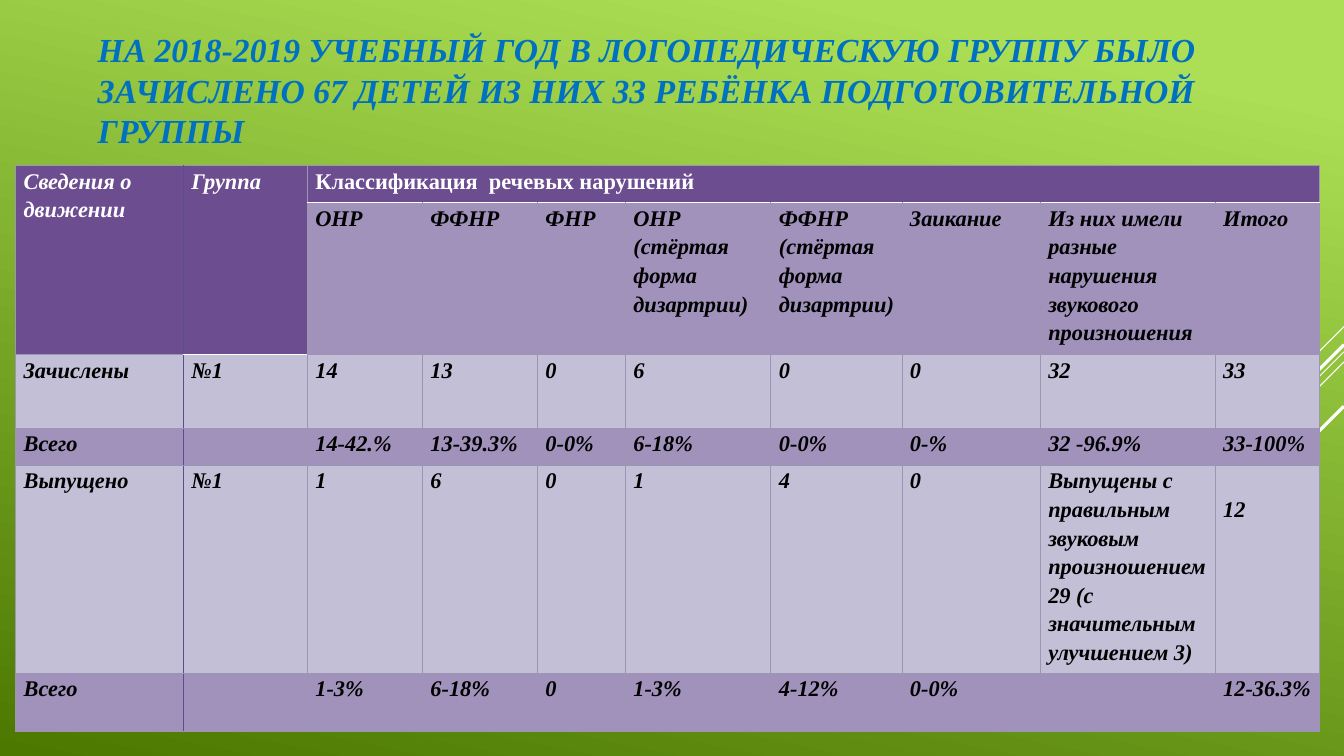
"""Build the slide on children enrolled in the speech therapy group."""
from typing import NamedTuple

from lxml import etree
from pptx import Presentation
from pptx.dml.color import RGBColor
from pptx.enum.shapes import MSO_CONNECTOR
from pptx.enum.text import MSO_ANCHOR, PP_ALIGN
from pptx.oxml.ns import qn
from pptx.util import Pt

STRAIGHT = MSO_CONNECTOR.STRAIGHT
MIDDLE = MSO_ANCHOR.MIDDLE
LEFT = PP_ALIGN.LEFT
FONT = "Times New Roman"
WHITE = RGBColor(0xFF, 0xFF, 0xFF)
BLACK = RGBColor(0, 0, 0)
BLUE = RGBColor(0x00, 0x70, 0xC0)
LIME = RGBColor(0xAC, 0xDF, 0x55)
GREEN = RGBColor(0x4C, 0x78, 0x00)
PURPLE = RGBColor(0x6C, 0x4D, 0x90)
LILAC = RGBColor(0xA0, 0x92, 0xBA)
PALE = RGBColor(0xC2, 0xBF, 0xD6)
GRID = RGBColor(0x99, 0x95, 0xB3)
DARK_RULE = RGBColor(0x5A, 0x4D, 0x90)
NO_STYLE = "{2D5ABB26-0587-4C30-8999-92F81FD0307C}"
SLIDE_WIDTH, SLIDE_HEIGHT = 960, 540

TITLE = ("НА 2018-2019 УЧЕБНЫЙ ГОД В ЛОГОПЕДИЧЕСКУЮ ГРУППУ БЫЛО ЗАЧИСЛЕНО "
         "67 ДЕТЕЙ ИЗ НИХ 33 РЕБЁНКА ПОДГОТОВИТЕЛЬНОЙ ГРУППЫ")
COLUMN_WIDTHS = (119.8, 88.6, 82.2, 82.2, 62.8, 104, 93.6, 98.8, 125, 74.2)


class Ray(NamedTuple):
    """A 45-degree line that falls leftwards from the right slide edge."""

    top: float
    reach: float
    weight: float


class Row(NamedTuple):
    """A table row with its height, fill and cell texts."""

    height: float
    fill: RGBColor
    texts: tuple[str, ...]


class Edge(NamedTuple):
    """Colour and weight of a cell border."""

    color: RGBColor
    weight: float


THIN = Edge(GRID, 0.75)
DARK = Edge(DARK_RULE, 1.25)
BRIGHT = Edge(WHITE, 1.25)

RAYS = (
    Ray(233.3, 72, 0.75),
    Ray(251.3, 234.7, 0.75),
    Ray(258.5, 149.5, 0.75),
    Ray(246.2, 137.5, 2.25),
    Ray(290.2, 100, 2.25),
)
ROWS = (
    Row(26.4, PURPLE, ("Сведения о движении", "Группа", "Классификация  речевых нарушений",
                       "", "", "", "", "", "", "")),
    Row(108.6, LILAC, ("", "", "ОНР", "ФФНР", "ФНР", "ОНР (стёртая форма дизартрии)",
                       "ФФНР (стёртая форма дизартрии)", "Заикание",
                       "Из них имели разные нарушения звукового произношения", "Итого")),
    Row(52.6, PALE, ("Зачислены", "№1", "14", "13", "0", "6", "0", "0", "32", "33")),
    Row(26.4, LILAC, ("Всего", "", "14-42.%", "13-39.3%", "0-0%", "6-18%", "0-0%", "0-%",
                      "32 -96.9%", "33-100%")),
    Row(148.6, PALE, ("Выпущено", "№1", "1", "6", "0", "1", "4", "0",
                      "Выпущены с правильным звуковым произношением 29 "
                      "(с значительным улучшением 3)", "12")),
    Row(41.4, LILAC, ("Всего", "", "1-3%", "6-18%", "0", "1-3%", "4-12%", "0-0%", "",
                      "12-36.3%")),
)
RELEASED_TOTAL = (4, 9)


def format_text(text_frame, size: float, color: RGBColor, italic: bool = True) -> None:
    """Format every run of a text frame in the bold slide font."""
    for paragraph in text_frame.paragraphs:
        for run in paragraph.runs:
            run.font.name = FONT
            run.font.size = Pt(size)
            run.font.bold = True
            run.font.italic = italic
            run.font.color.rgb = color


def paint_background(slide) -> None:
    """Fill the background with the lime to green gradient."""
    fill = slide.background.fill
    fill.gradient()
    fill.gradient_angle = 258
    for stop, color, position in zip(fill.gradient_stops, (LIME, GREEN), (0.1, 1)):
        stop.color.rgb = color
        stop.position = position


def add_ray(slide, ray: Ray) -> None:
    """Draw one decorative diagonal line."""
    connector = slide.shapes.add_connector(
        STRAIGHT, Pt(SLIDE_WIDTH), Pt(ray.top),
        Pt(SLIDE_WIDTH - ray.reach), Pt(ray.top + ray.reach))
    connector.line.color.rgb = WHITE
    connector.line.width = Pt(ray.weight)
    etree.SubElement(connector._element.spPr, qn("a:effectLst"))


def vertical_edge(boundary: int) -> Edge:
    """Return the border to the left of the given column."""
    return DARK if boundary == 1 else THIN


def horizontal_edge(boundary: int, column: int) -> Edge:
    """Return the border above the given row in a column."""
    under_header = (boundary == 1 and column > 1) or (boundary == 2 and column == 1)
    return BRIGHT if under_header else THIN


def set_borders(cell, row: int, column: int) -> None:
    """Write the four borders of a cell before its fill."""
    edges = {
        "a:lnL": vertical_edge(column),
        "a:lnR": vertical_edge(column + 1),
        "a:lnT": horizontal_edge(row, column),
        "a:lnB": horizontal_edge(row + 1, column),
    }
    properties = cell._tc.get_or_add_tcPr()
    for index, (tag, edge) in enumerate(edges.items()):
        line = etree.Element(qn(tag), w=str(Pt(edge.weight)))
        fill = etree.SubElement(line, qn("a:solidFill"))
        etree.SubElement(fill, qn("a:srgbClr"), val=str(edge.color))
        properties.insert(index, line)


def fill_cell(cell, row: int, column: int) -> None:
    """Set the text, fill and borders of one cell."""
    is_header = row == 0 or (row == 1 and column < 2)
    cell.margin_left = cell.margin_right = Pt(5.7)
    cell.margin_top = Pt(20.4 if (row, column) == RELEASED_TOTAL else 0)
    cell.margin_bottom = Pt(0)
    cell.fill.solid()
    cell.fill.fore_color.rgb = PURPLE if is_header else ROWS[row].fill
    set_borders(cell, row, column)
    cell.text_frame.text = ROWS[row].texts[column]
    cell.text_frame.paragraphs[0].line_spacing = 1.15
    is_classification = row == 0 and column == 2
    format_text(cell.text_frame, 16, WHITE if is_header else BLACK, not is_classification)


def add_children_table(slide) -> None:
    """Add the table of speech disorders."""
    frame = slide.shapes.add_table(
        len(ROWS), len(COLUMN_WIDTHS), Pt(11.2), Pt(118.3),
        Pt(sum(COLUMN_WIDTHS)), Pt(sum(row.height for row in ROWS)))
    table = frame.table
    table.first_row = table.horz_banding = False
    table._tbl.tblPr.find(qn("a:tableStyleId")).text = NO_STYLE
    for column, width in zip(table.columns, COLUMN_WIDTHS):
        column.width = Pt(width)
    for row_index, row in enumerate(ROWS):
        table.rows[row_index].height = Pt(row.height)
        for column_index in range(len(COLUMN_WIDTHS)):
            fill_cell(table.cell(row_index, column_index), row_index, column_index)
    for column_index in range(2):
        table.cell(0, column_index).merge(table.cell(1, column_index))
    table.cell(0, 2).merge(table.cell(0, len(COLUMN_WIDTHS) - 1))


def add_title(slide) -> None:
    """Place and format the title."""
    title = slide.shapes.title
    title.left, title.top, title.width, title.height = Pt(62.6), Pt(10.1), Pt(828), Pt(108)
    title.text_frame.text = TITLE
    title.text_frame.word_wrap = True
    title.text_frame.vertical_anchor = MIDDLE
    title.text_frame.paragraphs[0].alignment = LEFT
    format_text(title.text_frame, 24, BLUE)


def main() -> None:
    """Build and save the presentation."""
    presentation = Presentation()
    presentation.slide_width, presentation.slide_height = Pt(SLIDE_WIDTH), Pt(SLIDE_HEIGHT)
    slide = presentation.slides.add_slide(presentation.slide_layouts[5])
    paint_background(slide)
    add_title(slide)
    for ray in RAYS:
        add_ray(slide, ray)
    add_children_table(slide)
    presentation.save("out.pptx")


if __name__ == "__main__":
    main()
